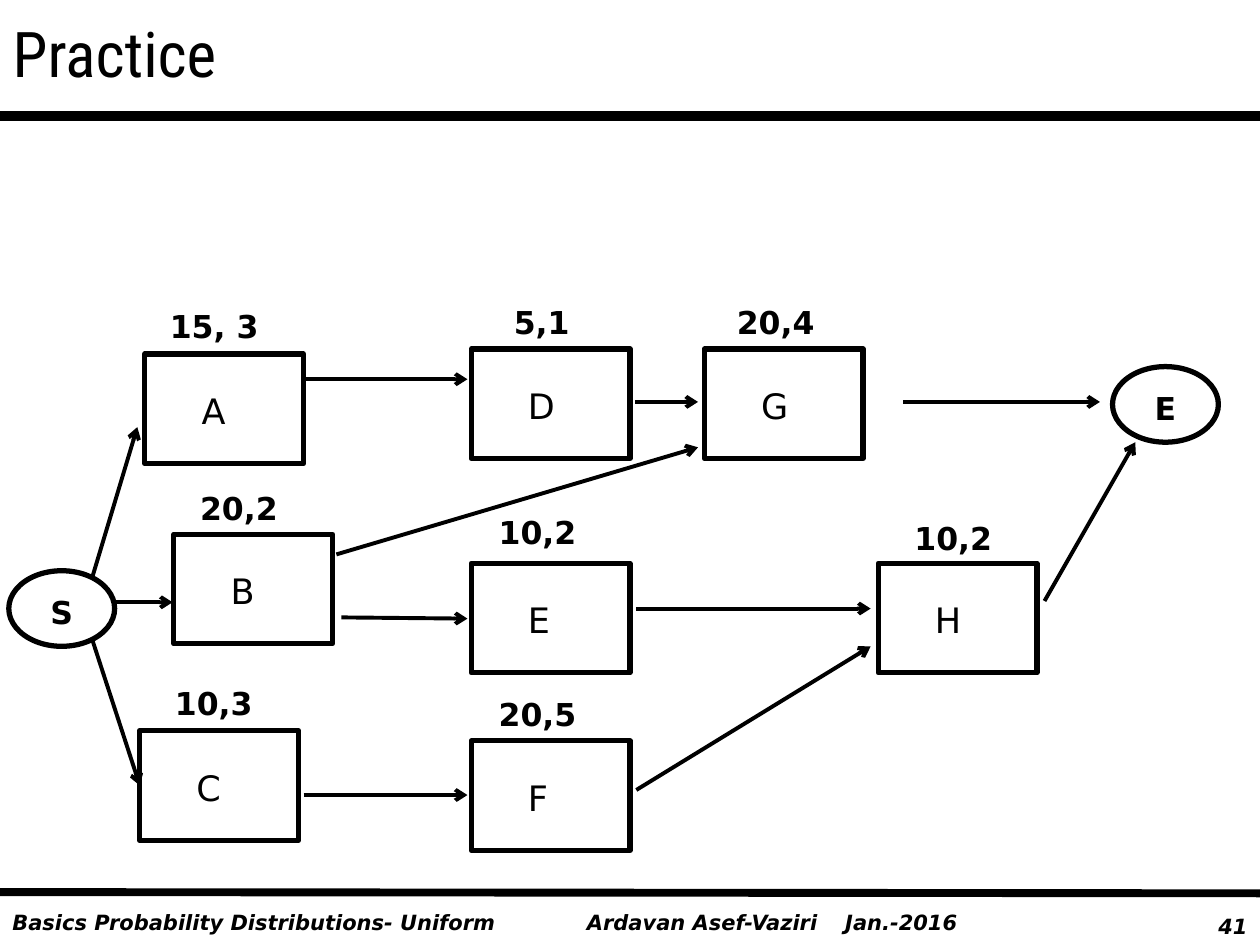
"""Draw a practice slide with a task network from S to E."""
from dataclasses import dataclass
from typing import Optional

from lxml import etree
from pptx import Presentation
from pptx.dml.color import RGBColor
from pptx.enum.shapes import MSO_CONNECTOR, MSO_SHAPE
from pptx.enum.text import MSO_ANCHOR, PP_ALIGN
from pptx.oxml.ns import qn
from pptx.util import Inches, Length, Pt

BLACK = RGBColor(0, 0, 0)
FONT = "DejaVu Sans"
HEAD = "Roboto Condensed"
LEFT, MID, RIGHT = PP_ALIGN.LEFT, PP_ALIGN.CENTER, PP_ALIGN.RIGHT
CENTRE = MSO_ANCHOR.MIDDLE
RECT, OVAL = MSO_SHAPE.RECTANGLE, MSO_SHAPE.OVAL
STRAIGHT = MSO_CONNECTOR.STRAIGHT
WIDE, HIGH = Inches(10), Inches(7.5)
COLS, ROWS = 100, 75
BOX = (12.6, 8.7)
RING = (8.4, 6)
SIDE = 1


@dataclass
class Task:
    name: str
    col: float
    row: float
    note: str
    shift: float
    lift: float = 4.1


@dataclass
class End:
    name: str
    col: float
    row: float


@dataclass
class Arrow:
    start: tuple[float, float]
    stop: tuple[float, float]
    goal: Optional[str] = None


TASKS = [
    Task("A", 11.5, 28.1, "15, 3", 1, 4.2),
    Task("B", 13.8, 42.4, "20,2", 1.1),
    Task("C", 11.1, 58, "10,3", 1.8, 4.2),
    Task("D", 37.4, 27.7, "5,1", 2.4),
    Task("E", 37.4, 44.7, "10,2", 1.2, 4.5),
    Task("F", 37.4, 58.8, "20,5", 1.2),
    Task("G", 55.9, 27.7, "20,4", 1.6),
    Task("H", 69.7, 44.7, "10,2", 1.9, 4),
]
ENDS = [End("S", 0.7, 45.3), End("E", 88.3, 29.1)]
ARROWS = [
    Arrow((7.3, 45.9), (10.9, 33.9)),
    Arrow((8.9, 47.8), (13.7, 47.8)),
    Arrow((7.3, 50.7), (10.9, 62.1), "C"),
    Arrow((24.1, 30.1), (37.1, 30.1)),
    Arrow((26.7, 44), (55.4, 35.5)),
    Arrow((27.1, 49), (37.1, 49.1)),
    Arrow((24.1, 63.1), (37.1, 63.1)),
    Arrow((50.4, 31.9), (55.4, 31.9)),
    Arrow((50.5, 48.3), (69.1, 48.3)),
    Arrow((50.5, 62.7), (69.1, 51.3)),
    Arrow((71.7, 31.9), (87.3, 31.9)),
    Arrow((82.9, 47.7), (90.1, 35.1)),
]


def across(cols: float) -> Length:
    """Turn grid columns into a length."""
    return Length(round(WIDE * cols / COLS))


def down(rows: float) -> Length:
    """Turn grid rows into a length."""
    return Length(round(HIGH * rows / ROWS))


def area(col: float, row: float, wide: float, high: float) -> tuple:
    """Turn a grid area into left, top, width and height."""
    return across(col), down(row), across(wide), down(high)


def write(para, text: str, size: float, bold=False, slant=False, face=FONT) -> None:
    """Add one black run to a paragraph."""
    run = para.add_run()
    run.text = text
    font = run.font
    font.size, font.name = Pt(size), face
    font.bold, font.italic = bold, slant
    font.color.rgb = BLACK


def label(slide, place: tuple, text: str, size: float, slant=False, align=LEFT):
    """Add a bold text box and return its paragraph."""
    frame = slide.shapes.add_textbox(*area(*place)).text_frame
    frame.word_wrap = True
    para = frame.paragraphs[0]
    para.alignment = align
    write(para, text, size, bold=True, slant=slant)
    return para


def outline(slide, kind, place: tuple, drop: float):
    """Add an unfilled shape with a thick black edge and centred text height."""
    shape = slide.shapes.add_shape(kind, *area(*place))
    shape.shadow.inherit = False
    shape.fill.background()
    shape.line.color.rgb = BLACK
    shape.line.width = Pt(3)
    frame = shape.text_frame
    frame.vertical_anchor = CENTRE
    frame.margin_top, frame.margin_bottom = down(drop), 0
    return shape


def task(slide, item: Task):
    """Draw a task box with its note above."""
    shape = outline(slide, RECT, (item.col, item.row, *BOX), 0.3)
    shape.text_frame.margin_left = across(4.5)
    para = shape.text_frame.paragraphs[0]
    para.alignment = LEFT
    write(para, item.name, 20)
    label(slide, (item.col + item.shift, item.row - item.lift, 10, 4), item.note, 18)
    return shape


def ring(slide, item: End) -> None:
    """Draw a start or end node."""
    shape = outline(slide, OVAL, (item.col, item.row, *RING), 0.6)
    frame = shape.text_frame
    frame.margin_left = frame.margin_right = 0
    para = frame.paragraphs[0]
    para.alignment = MID
    write(para, item.name, 18, bold=True)


def stroke(slide, start: tuple, stop: tuple, width: float):
    """Draw a plain black line."""
    line = slide.shapes.add_connector(
        STRAIGHT, across(start[0]), down(start[1]), across(stop[0]), down(stop[1])
    )
    line.line.color.rgb = BLACK
    line.line.width = Pt(width)
    etree.SubElement(line._element.spPr, qn("a:effectLst"))
    return line


def arrow(slide, item: Arrow, boxes: dict) -> None:
    """Draw an arrow and join it to its goal, if any."""
    line = stroke(slide, item.start, item.stop, 2.25)
    etree.SubElement(line.line._get_or_add_ln(), qn("a:tailEnd"), type="arrow")
    if item.goal:
        line.end_connect(boxes[item.goal], SIDE)


def frame(slide) -> None:
    """Draw the title, the two rules and the footer."""
    title = slide.shapes.title
    title.left, title.top, title.width, title.height = area(0, 0.6, 100, 7.1)
    title.text_frame.vertical_anchor = CENTRE
    para = title.text_frame.paragraphs[0]
    para.alignment = LEFT
    write(para, "Practice", 36, face=HEAD)
    stroke(slide, (0, 9.2), (100, 9.2), 6)
    stroke(slide, (0, 70.8), (100, 70.9), 4.5)
    label(slide, (0, 71.7, 46.7, 3), "Basics Probability Distributions- Uniform", 12, True)
    credit = label(slide, (45.6, 71.7, 33.5, 3), "Ardavan Asef-Vaziri\tJan.-2016", 12, True)
    tabs = etree.SubElement(credit._p.get_or_add_pPr(), qn("a:tabLst"))
    etree.SubElement(tabs, qn("a:tab"), pos=str(across(20.5)), algn="l")
    label(slide, (92.5, 72, 7.5, 3), "41", 12, True, RIGHT)


def main() -> None:
    """Build and save the slide."""
    deck = Presentation()
    deck.slide_width, deck.slide_height = WIDE, HIGH
    slide = deck.slides.add_slide(deck.slide_layouts[5])
    frame(slide)
    boxes = {item.name: task(slide, item) for item in TASKS}
    for item in ENDS:
        ring(slide, item)
    for item in ARROWS:
        arrow(slide, item, boxes)
    deck.save("out.pptx")


if __name__ == "__main__":
    main()
